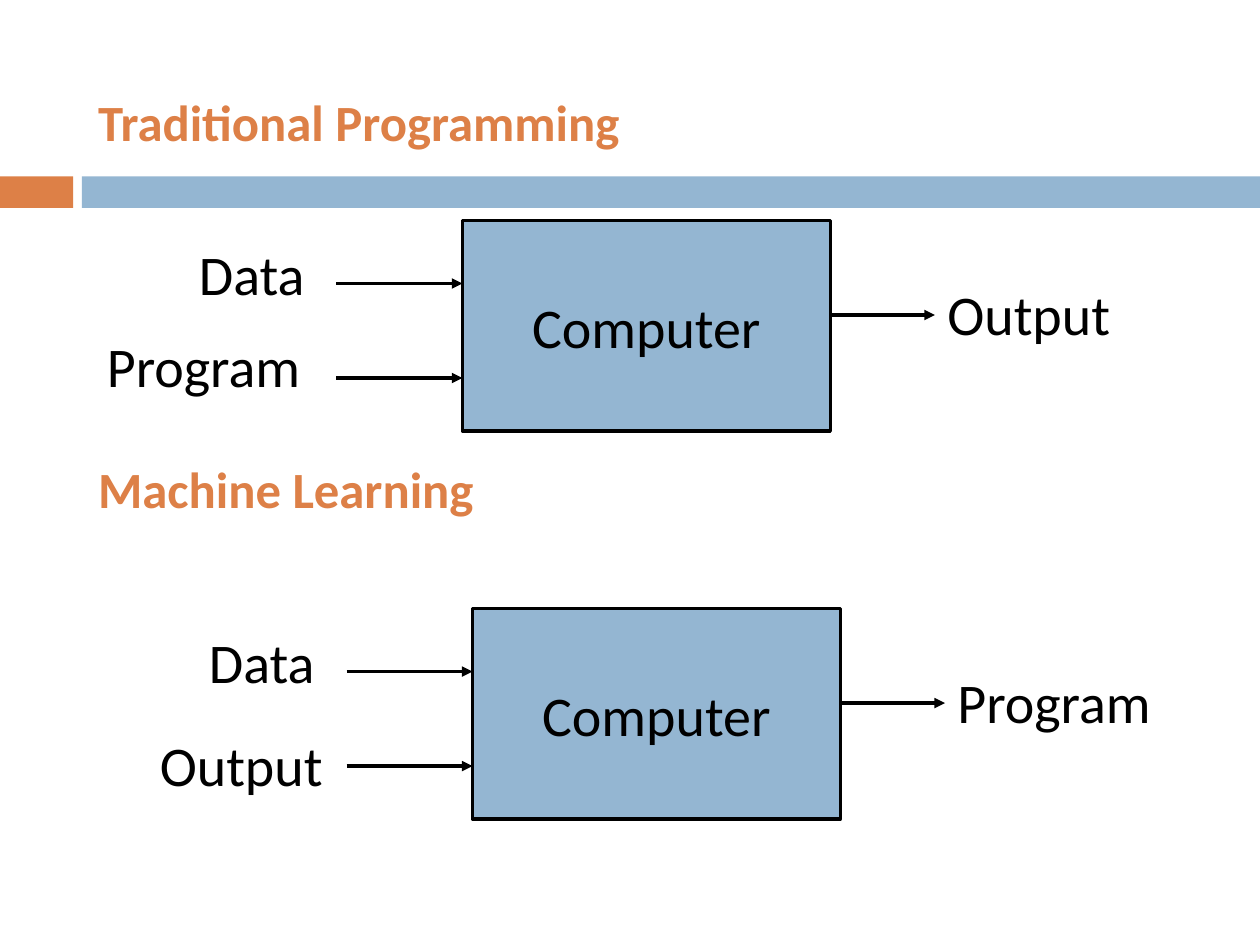
from pptx import Presentation
from pptx.dml.color import RGBColor
from pptx.enum import shapes as kinds, text
from pptx.oxml.ns import qn
from pptx.util import Inches, Pt
from lxml import etree

ORANGE = RGBColor(0xDD, 0x80, 0x47)
BLUE = RGBColor(0x94, 0xB6, 0xD2)
BLACK = RGBColor(0, 0, 0)
FONT = "Calibri"
BOX_WIDTH, BOX_HEIGHT = 2.92, 1.67
LABEL_WIDTHS = {"Data": 1.14, "Program": 1.9, "Output": 1.53}


def write(frame, wording, size, color, bold=False):
    """Put one styled, unwrapped line into a text frame."""
    frame.word_wrap = False
    line = frame.paragraphs[0]
    line.text = wording
    line.font.name = FONT
    line.font.size = Pt(size)
    line.font.bold = bold
    line.font.color.rgb = color
    return line


def add_rectangle(slide, left, top, width, height, color):
    """Add a flat rectangle without an outline."""
    rectangle = slide.shapes.add_shape(
        kinds.MSO_SHAPE.RECTANGLE,
        Inches(left), Inches(top), Inches(width), Inches(height))
    rectangle.shadow.inherit = False
    rectangle.fill.solid()
    rectangle.fill.fore_color.rgb = color
    rectangle.line.fill.background()
    return rectangle


def add_label(slide, wording, left, top, width, height=0.63,
              size=32, color=BLACK, bold=False):
    """Add a single line of text."""
    label = slide.shapes.add_textbox(
        Inches(left), Inches(top), Inches(width), Inches(height))
    write(label.text_frame, wording, size, color, bold)


def add_heading(slide, wording, top):
    """Add an orange section heading."""
    add_label(slide, wording, 0.68, top, 4.4, 0.58, 29, ORANGE, True)


def add_arrow(slide, start, end, y):
    """Add a horizontal arrow pointing right."""
    arrow = slide.shapes.add_connector(
        kinds.MSO_CONNECTOR.STRAIGHT,
        Inches(start), Inches(y), Inches(end), Inches(y))
    arrow.line.color.rgb = BLACK
    arrow.line.width = Pt(2)
    etree.SubElement(arrow.line._get_or_add_ln(), qn("a:tailEnd"), type="triangle")
    etree.SubElement(arrow._element.spPr, qn("a:effectLst"))


def add_computer(slide, left, top):
    """Add the outlined computer box."""
    computer = add_rectangle(slide, left, top, BOX_WIDTH, BOX_HEIGHT, BLUE)
    computer.line.color.rgb = BLACK
    computer.line.width = Pt(2)
    computer.text_frame.vertical_anchor = text.MSO_ANCHOR.MIDDLE
    line = write(computer.text_frame, "Computer", 32, BLACK)
    line.alignment = text.PP_ALIGN.CENTER


def add_diagram(slide, left, top, labels):
    """Add a computer with two inputs and one result, labels offset from it."""
    add_computer(slide, left, top)
    for drop in (0.5, 1.25):
        add_arrow(slide, left - 1, left, top + drop)
    add_arrow(slide, left + BOX_WIDTH, left + 3.75, top + 0.75)
    for wording, across, down in labels:
        add_label(slide, wording, left + across, top + down, LABEL_WIDTHS[wording])


def main():
    """Build and save the slide."""
    deck = Presentation()
    deck.slide_width, deck.slide_height = Inches(10), Inches(7.5)
    slide = deck.slides.add_slide(deck.slide_layouts[6])
    add_rectangle(slide, 0, 1.4, 0.58, 0.25, ORANGE)
    add_rectangle(slide, 0.65, 1.4, 9.35, 0.25, BLUE)
    add_heading(slide, "Traditional Programming", 0.67)
    add_heading(slide, "Machine Learning", 3.58)
    add_diagram(slide, 3.67, 1.75, [
        ("Data", -2.19, 0.1), ("Program", -2.92, 0.83), ("Output", 3.75, 0.42)])
    add_diagram(slide, 3.75, 4.83, [
        ("Data", -2.19, 0.1), ("Output", -2.58, 0.92), ("Program", 3.75, 0.42)])
    deck.save("out.pptx")


if __name__ == "__main__":
    main()
